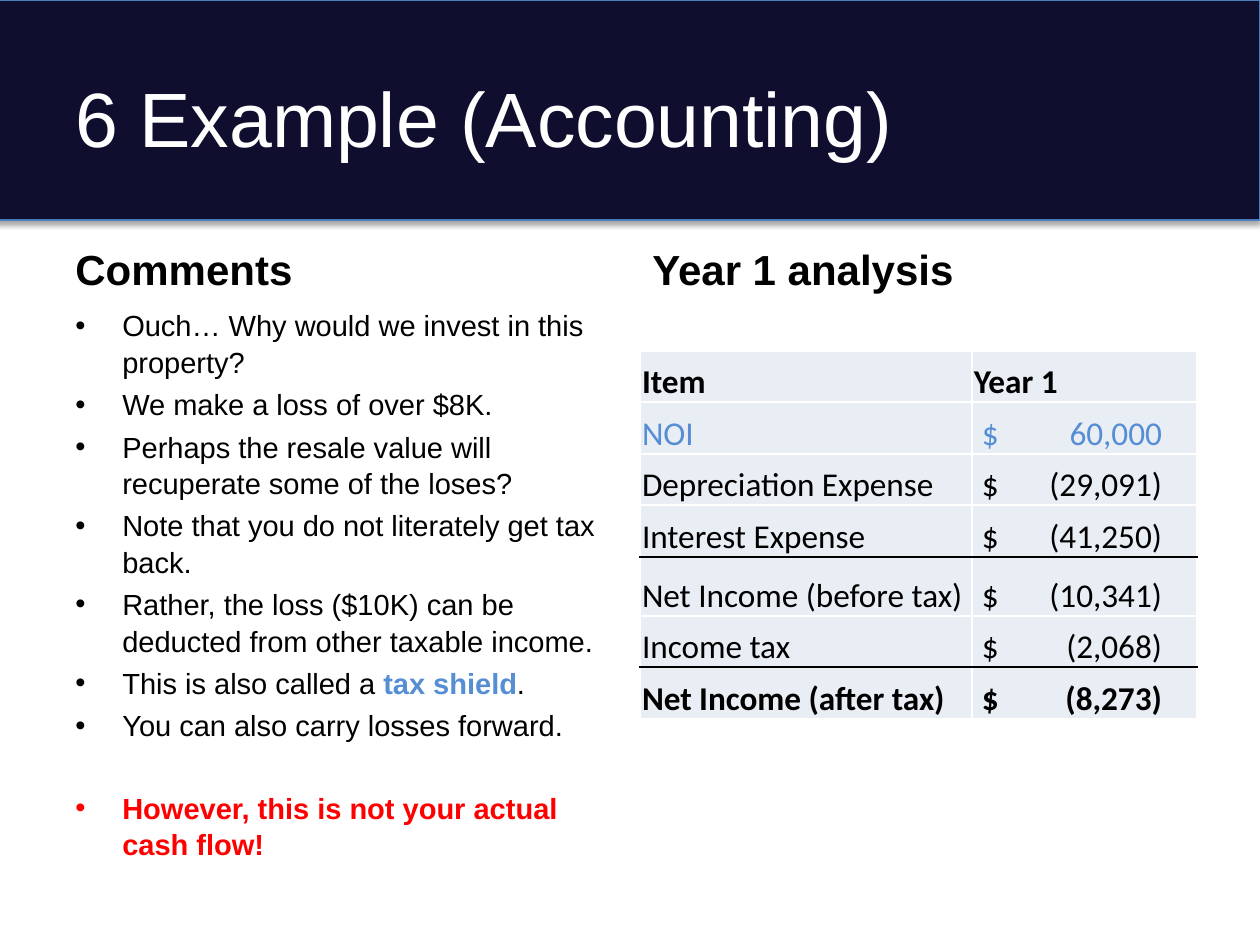
"""Builds the accounting example slide with comments and a year 1 analysis."""
import lxml.etree
import pptx
import pptx.dml.color
import pptx.enum.shapes
import pptx.enum.text
import pptx.oxml.ns
import pptx.util

PX_PER_INCH = 126
COLORS = {
    "navy": "100E2F", "edge": "4B7EBC", "white": "FFFFFF", "black": "000000",
    "blue": "558ED5", "red": "FF0000", "cell": "E9EDF4",
}
ANCHOR = pptx.enum.text.MSO_ANCHOR
COMMENTS = [
    [("Ouch… Why would we invest in this property?", {})],
    [("We make a loss of over $8K.", {})],
    [("Perhaps the resale value will recuperate some of the loses?", {})],
    [("Note that you do not literately get tax back.", {})],
    [("Rather, the loss ($10K) can be deducted from other taxable income.", {})],
    [("This is also called a ", {}), ("tax shield", {"color": "blue", "bold": True}), (".", {})],
    [("You can also carry losses forward.", {})],
    [("However, this is not your actual cash flow!", {"color": "red", "bold": True})],
]
ANALYSIS = [
    ("Item", "Year 1", {"bold": True}),
    ("NOI", "$\t60,000", {"color": "blue"}),
    ("Depreciation Expense", "$\t(29,091)", {}),
    ("Interest Expense", "$\t(41,250)", {}),
    ("Net Income (before tax)", "$\t(10,341)", {}),
    ("Income tax", "$\t(2,068)", {}),
    ("Net Income (after tax)", "$\t(8,273)", {"bold": True}),
]
COLUMN_WIDTHS = [332, 225]
ROW_HEIGHTS = [51, 52, 51, 52, 59, 51, 52]
RULED_ROWS = {3, 5}


def px(length):
    return pptx.util.Emu(round(length * pptx.util.Inches(1) / PX_PER_INCH))


def rgb(color):
    return pptx.dml.color.RGBColor.from_string(COLORS[color])


def child(parent, tag, **attributes):
    element = lxml.etree.SubElement(parent, pptx.oxml.ns.qn(tag))
    for key, value in attributes.items():
        element.set(key, str(value))
    return element


class SlideWriter:
    """Holds the style and the current slide."""

    def __init__(self, slide):
        self.slide = slide
        self.font = {"name": "Arial", "size": 16.6, "bold": False, "color": "black"}

    def run(self, paragraph, text, **changes):
        style = {**self.font, **changes}
        run = paragraph.add_run()
        run.text = text
        run.font.color.rgb = rgb(style.pop("color"))
        style["size"] = pptx.util.Pt(style["size"])
        for key, value in style.items():
            setattr(run.font, key, value)

    def band(self, left, top, width, height):
        band = self.slide.shapes.add_shape(
            pptx.enum.shapes.MSO_SHAPE.RECTANGLE, px(left), px(top), px(width), px(height))
        band.fill.solid()
        band.fill.fore_color.rgb = rgb("navy")
        band.line.color.rgb = rgb("edge")
        band.line.width = pptx.util.Pt(0.75)
        band.shadow.inherit = False
        effects = band._element.spPr.find(pptx.oxml.ns.qn("a:effectLst"))
        shadow = child(effects, "a:outerShdw", blurRad=pptx.util.Pt(3.1),
                       dist=pptx.util.Pt(1.8), dir=5400000, rotWithShape=0)
        child(child(shadow, "a:srgbClr", val=COLORS["black"]), "a:alpha", val=35000)

    def frame(self, left, top, width, height, anchor):
        frame = self.slide.shapes.add_textbox(px(left), px(top), px(width), px(height)).text_frame
        for key, value in {"word_wrap": True, "vertical_anchor": anchor}.items():
            setattr(frame, key, value)
        return frame

    def heading(self, text, left, top, width, height, anchor=ANCHOR.BOTTOM, **style):
        frame = self.frame(left, top, width, height, anchor)
        self.run(frame.paragraphs[0], text, **style)

    def bullets(self, items, left, top, width, height):
        frame = self.frame(left, top, width, height, ANCHOR.TOP)
        for index, parts in enumerate(items):
            paragraph = frame.paragraphs[0] if index == 0 else frame.add_paragraph()
            paragraph.line_spacing = 1.05
            is_closing = index == len(items) - 1
            paragraph.space_before = pptx.util.Pt(26.3 if is_closing else 3.2)
            properties = paragraph._p.get_or_add_pPr()
            properties.set("marL", str(px(47)))
            properties.set("indent", str(px(-47)))
            child(properties, "a:buFont", typeface="Arial")
            child(properties, "a:buChar", char="•")
            for text, style in parts:
                self.run(paragraph, text, **style)

    def cell(self, cell, text, borders, style):
        is_amount = "\t" in text
        layout = {
            "margin_left": px(10 if is_amount else 2), "margin_right": px(2),
            "margin_top": px(2), "margin_bottom": 0, "vertical_anchor": ANCHOR.BOTTOM,
        }
        for key, value in layout.items():
            setattr(cell, key, value)
        properties = cell._tc.get_or_add_tcPr()
        for side, color in borders.items():
            line = child(properties, f"a:ln{side}", w=pptx.util.Pt(1))
            child(child(line, "a:solidFill"), "a:srgbClr", val=COLORS[color])
        cell.fill.solid()
        cell.fill.fore_color.rgb = rgb("cell")
        paragraph = cell.text_frame.paragraphs[0]
        if is_amount:
            tabs = child(paragraph._p.get_or_add_pPr(), "a:tabLst")
            child(tabs, "a:tab", pos=px(180), algn="r")
        self.run(paragraph, text, name="Calibri", size=19, **style)

    def table(self, rows, left, top):
        table = self.slide.shapes.add_table(
            len(rows), len(COLUMN_WIDTHS), px(left), px(top),
            px(sum(COLUMN_WIDTHS)), px(sum(ROW_HEIGHTS))).table
        for key, value in {"first_row": False, "horz_banding": False}.items():
            setattr(table, key, value)
        for column, width in zip(table.columns, COLUMN_WIDTHS):
            column.width = px(width)
        for index, (*texts, style) in enumerate(rows):
            table.rows[index].height = px(ROW_HEIGHTS[index])
            borders = {
                "L": "white", "R": "white",
                "T": "black" if index - 1 in RULED_ROWS else "white",
                "B": "black" if index in RULED_ROWS else "white",
            }
            for column, text in enumerate(texts):
                self.cell(table.cell(index, column), text, borders, style)


def main():
    deck = pptx.Presentation()
    deck.slide_width, deck.slide_height = px(1260), px(945)
    writer = SlideWriter(deck.slides.add_slide(deck.slide_layouts[6]))
    writer.band(-5, 0, 1265, 220)
    writer.heading("6 Example (Accounting)", 63, 38, 1134, 158,
                   anchor=ANCHOR.MIDDLE, size=44, color="white")
    for title, left in (("Comments", 63), ("Year 1 analysis", 640)):
        writer.heading(title, left, 212, 557, 88, size=24, bold=True)
    writer.bullets(COMMENTS, 63, 300, 557, 544)
    writer.table(ANALYSIS, 640, 351)
    deck.save("out.pptx")


if __name__ == "__main__":
    main()
